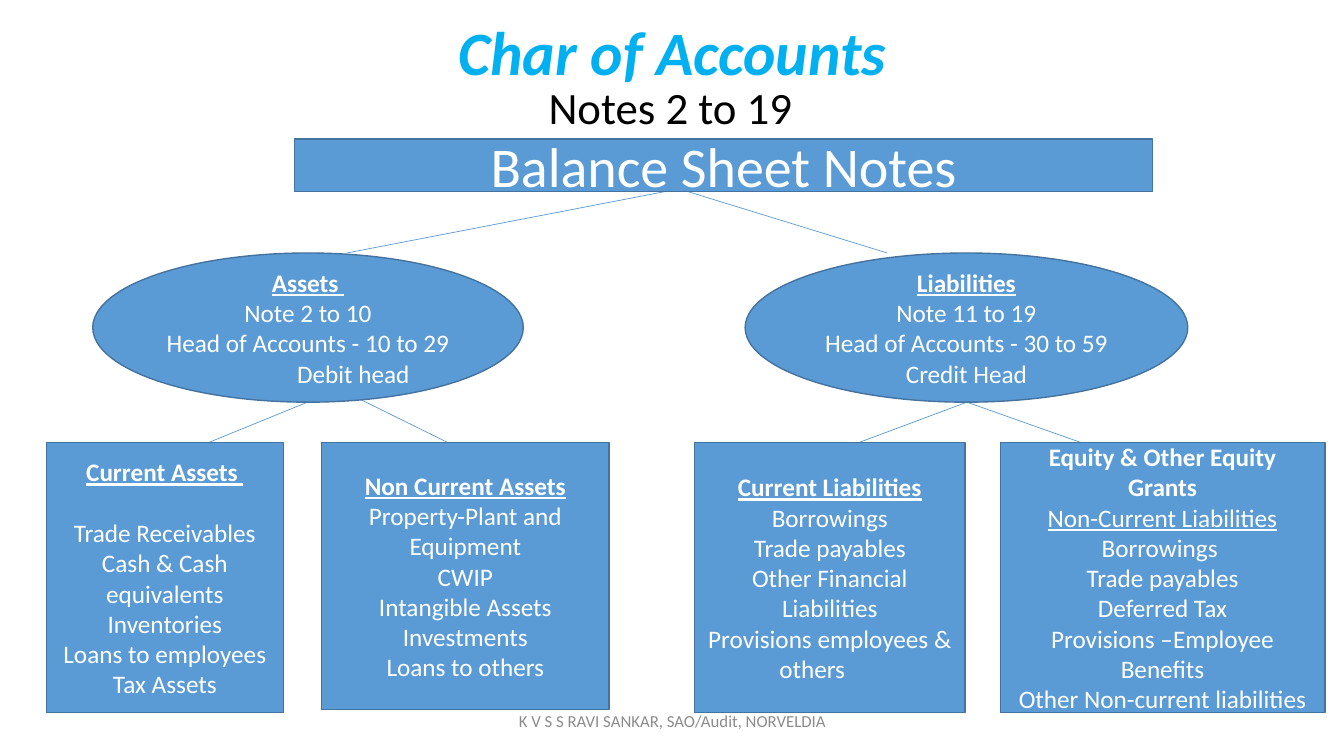
from pptx import Presentation
from pptx.dml.color import RGBColor
from pptx.enum.shapes import MSO_CONNECTOR as LINK, MSO_SHAPE as SHAPE
from pptx.enum.text import MSO_ANCHOR as ANCHOR, PP_ALIGN as ALIGN
from pptx.oxml.ns import qn
from pptx.util import Pt
from lxml.etree import SubElement

PX = 9144  # 100 px to the inch
BLUE = RGBColor(0x5B, 0x9B, 0xD5)
EDGE = RGBColor(0x43, 0x73, 0x9E)
CYAN = RGBColor(0x00, 0xB0, 0xF0)
GREY = RGBColor(0x8C, 0x8C, 0x8C)
BLACK = RGBColor(0, 0, 0)
WHITE = RGBColor(255, 255, 255)

BOLD = {"bold": True}
LINED = {"underline": True}
HEAD = {"bold": True, "underline": True}

deck = Presentation()
deck.slide_width, deck.slide_height = 1333 * PX, 750 * PX
slide = deck.slides.add_slide(deck.slide_layouts[6])
shapes = slide.shapes


def write(shape, lines, size, color, anchor=ANCHOR.MIDDLE):
    """Fill a shape with centred lines, each a text and its font values."""
    frame = shape.text_frame
    frame.word_wrap = True
    frame.vertical_anchor = anchor
    for i, (text, style) in enumerate(lines):
        para = frame.add_paragraph() if i else frame.paragraphs[0]
        para.alignment = ALIGN.CENTER
        run = para.add_run()
        run.text = text
        run.font.color.rgb = color
        look = {"name": "Calibri", "size": Pt(size), **style}
        for key, value in look.items():
            setattr(run.font, key, value)
    return frame.paragraphs


def block(kind, box, lines, size=18):
    """Draw a blue shape with white text."""
    shape = shapes.add_shape(kind, *[n * PX for n in box])
    shape.shadow.inherit = False
    shape.fill.solid()
    shape.fill.fore_color.rgb = BLUE
    shape.line.color.rgb = EDGE
    shape.line.width = Pt(1)
    return write(shape, lines, size, WHITE)


# Title, subtitle and footer
labels = [
    ((92, 14, 1150, 82), "Char of Accounts", 44, CYAN,
     {"bold": True, "italic": True}, ANCHOR.MIDDLE, 0.9),
    ((30, 80, 1270, 638), "Notes 2 to 19", 32, BLACK, {}, ANCHOR.TOP, 0.9),
    ((442, 695, 450, 40), "K V S S RAVI SANKAR, SAO/Audit, NORVELDIA", 12,
     GREY, {}, ANCHOR.MIDDLE, 1.0),
]
for box, text, size, color, style, anchor, space in labels:
    label = shapes.add_textbox(*[n * PX for n in box])
    paras = write(label, [(text, style)], size, color, anchor)
    paras[0].line_spacing = space

# Tree branches
branches = [
    (717, 179, 344, 251), (682, 190, 880, 251),
    (305, 399, 207, 439), (357, 396, 444, 439),
    (959, 399, 852, 439), (959, 399, 1072, 439),
]
for ends in branches:
    link = shapes.add_connector(LINK.STRAIGHT, *[n * PX for n in ends])
    link.line.color.rgb = BLUE
    link.line.width = Pt(0.5)
    SubElement(link._element.spPr, qn("a:effectLst"))

# Root
block(SHAPE.RECTANGLE, (292, 138, 851, 52), [("Balance Sheet Notes", {})], 40)

# Two sides
assets = block(SHAPE.OVAL, (92, 251, 427, 148), [
    ("Assets ", HEAD),
    ("Note 2 to 10", {}),
    ("Head of Accounts - 10 to 29", {}),
    ("Debit head", {}),
])
assets[-1]._p.get_or_add_pPr().set("marL", str(90 * PX))
block(SHAPE.OVAL, (739, 251, 439, 148), [
    ("Liabilities", HEAD),
    ("Note 11 to 19", {}),
    ("Head of Accounts - 30 to 59", {}),
    ("Credit Head", {}),
])

# Four groups: left, width, height, headings, items
groups = [
    (46, 235, 268, [("Current Assets ", HEAD)],
     ["Trade Receivables", "Cash & Cash equivalents", "Inventories",
      "Loans to employees", "Tax Assets"]),
    (319, 285, 265, [("Non Current Assets", HEAD)],
     ["Property-Plant and Equipment", "CWIP", "Intangible Assets",
      "Investments", "Loans to others"]),
    (689, 268, 268, [("Current Liabilities", HEAD)],
     ["Borrowings", "Trade payables", "Other Financial Liabilities",
      "Provisions employees & others\t"]),
    (992, 322, 268,
     [("Equity & Other Equity", BOLD), ("Grants", BOLD),
      ("Non-Current Liabilities", LINED)],
     ["Borrowings ", "Trade payables", "Deferred Tax",
      "Provisions –Employee Benefits", "Other Non-current liabilities"]),
]
heads = []
for left, width, height, top, items in groups:
    lines = top + [(item, {}) for item in items]
    paras = block(SHAPE.RECTANGLE, (left, 439, width, height), lines)
    heads.append(paras[0])
heads[0].space_after = Pt(22)

deck.save("out.pptx")
